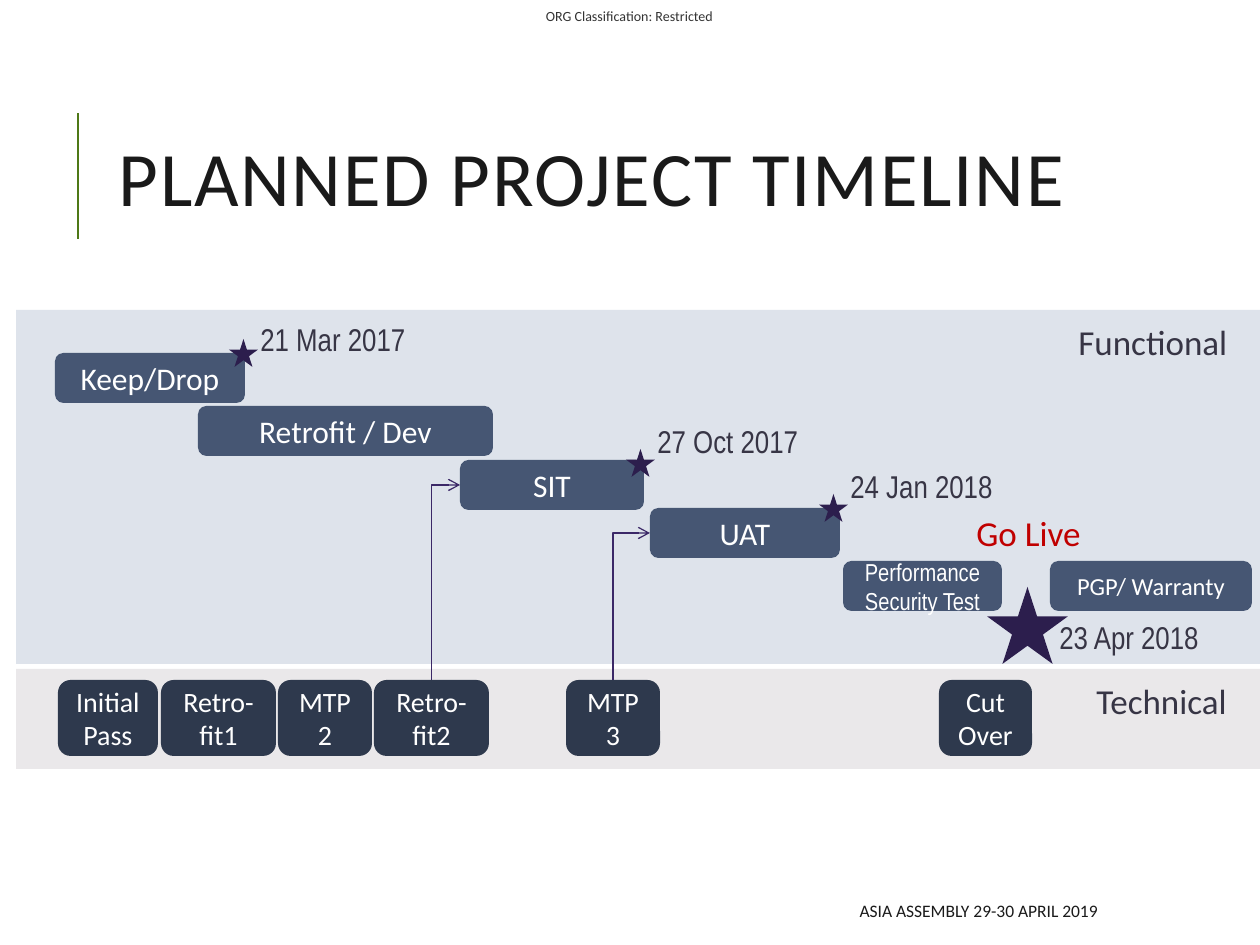
from dataclasses import dataclass

from lxml import etree
from pptx import Presentation
from pptx import util as u
from pptx.dml.color import RGBColor
from pptx.enum import shapes, text
from pptx.oxml.ns import qn

PX = u.Inches(1) / 126
COLORS = {
    "accent": "4E7817", "title": "1A1A1A", "header": "333333",
    "functional": "DEE3EB", "technical": "EAE8EA",
    "phase": "465673", "step": "2E394D", "white": "FFFFFF",
    "arrow": "3B2867", "star": "2C1E4D", "label": "373545", "live": "C00000",
}
KIND = shapes.MSO_SHAPE
ALIGN = text.PP_ALIGN


@dataclass
class Box:
    left: int
    top: int
    width: int
    height: int

    def emu(self) -> list[int]:
        return [px(v) for v in (self.left, self.top, self.width, self.height)]


@dataclass
class Bar:
    words: str
    box: Box
    fill: str = "phase"
    size: int = 18
    font: str = "Calibri"


@dataclass
class Label:
    words: str
    box: Box
    size: int = 18
    font: str = "Arial Narrow"
    color: str = "label"


def px(value: float) -> int:
    return round(value * PX)


def rgb(name: str) -> RGBColor:
    return RGBColor.from_string(COLORS[name])


def write(frame, words: str, size: int, font: str, color: str, align=ALIGN.LEFT):
    frame.text = words
    paragraph = frame.paragraphs[0]
    paragraph.alignment = align
    paragraph.font.size = u.Pt(size)
    paragraph.font.name = font
    paragraph.font.color.rgb = rgb(color)
    return paragraph


def add_filled(slide, kind, box: Box, fill: str):
    shape = slide.shapes.add_shape(kind, *box.emu())
    shape.shadow.inherit = False
    shape.fill.solid()
    shape.fill.fore_color.rgb = rgb(fill)
    shape.line.fill.background()
    return shape


def add_bar(slide, bar: Bar):
    shape = add_filled(slide, KIND.ROUNDED_RECTANGLE, bar.box, bar.fill)
    shape.text_frame.vertical_anchor = text.MSO_ANCHOR.MIDDLE
    write(shape.text_frame, bar.words, bar.size, bar.font, "white", ALIGN.CENTER)
    return shape


def add_label(slide, label: Label) -> None:
    frame = slide.shapes.add_textbox(*label.box.emu()).text_frame
    frame.word_wrap = False
    frame.auto_size = text.MSO_AUTO_SIZE.SHAPE_TO_FIT_TEXT
    write(frame, label.words, label.size, label.font, label.color)


def add_margin_text(slide, words: str, box: Box, size: int, color: str, align, inset: float):
    frame = slide.shapes.add_textbox(*box.emu()).text_frame
    frame.word_wrap = True
    frame.vertical_anchor = text.MSO_ANCHOR.MIDDLE
    frame.margin_left = frame.margin_right = u.Inches(inset)
    frame.margin_top = frame.margin_bottom = u.Inches(inset / 2)
    write(frame, words, size, "Calibri", color, align)


def style_line(connector, color: str, width: float) -> None:
    connector.line.color.rgb = rgb(color)
    connector.line.width = u.Pt(width)
    etree.SubElement(connector._element.spPr, qn("a:effectLst"))


def add_elbow(slide, step, phase) -> None:
    """Run up from the top of a step, then right into the side of a phase."""
    x1, y1 = step.left + step.width // 2, step.top
    x2, y2 = phase.left, phase.top + phase.height // 2
    elbow = slide.shapes.add_connector(shapes.MSO_CONNECTOR.ELBOW, x1, y1, x2, y2)
    elbow.begin_connect(step, 0)
    elbow.end_connect(phase, 1)
    style_line(elbow, "arrow", 0.75)
    etree.SubElement(elbow.line._get_or_add_ln(), qn("a:tailEnd"), type="arrow")

    # A one-corner elbow is stored turned a quarter, about its own centre
    properties = elbow._element.spPr
    properties.find(qn("a:prstGeom")).set("prst", "bentConnector2")
    frame = properties.find(qn("a:xfrm"))
    for key, value in (("rot", "5400000"), ("flipH", "1"), ("flipV", "1")):
        frame.set(key, value)
    elbow.width, elbow.height = y1 - y2, x2 - x1
    elbow.left = (x1 + x2 - elbow.width) // 2
    elbow.top = (y1 + y2 - elbow.height) // 2


PHASES = [
    Bar("Keep/Drop", Box(55, 353, 190, 50)),
    Bar("Retrofit / Dev", Box(198, 406, 295, 50)),
    Bar("SIT", Box(460, 460, 184, 50)),
    Bar("UAT", Box(650, 508, 190, 50)),
    Bar("Performance Security Test", Box(843, 561, 159, 50), size=14, font="Arial Narrow"),
    Bar("PGP/ Warranty", Box(1050, 561, 202, 50), size=14),
]
STEPS = [
    Bar(words, Box(left, 680, width, 76), "step", 16)
    for words, left, width in [
        ("Initial Pass", 58, 100), ("Retro-fit1", 161, 115), ("MTP 2", 278, 94),
        ("Retro-fit2", 374, 115), ("MTP 3", 566, 94), ("Cut Over", 939, 93),
    ]
]
LINKS = [("Retro-fit2", "SIT"), ("MTP 3", "UAT")]
STARS = [Box(left, top, 29, 28) for left, top in [(229, 339), (626, 449), (819, 494)]]
STARS.append(Box(987, 587, 81, 77))
LABELS = [
    Label("21 Mar 2017", Box(248, 314, 173, 50)),
    Label("27 Oct 2017", Box(645, 416, 168, 50)),
    Label("24 Jan 2018", Box(838, 461, 170, 50)),
    Label("23 Apr 2018", Box(1047, 612, 166, 50)),
    Label("Go Live", Box(964, 505, 147, 55), 20, "Calibri", "live"),
    Label("Functional", Box(1066, 314, 189, 55), 20, "Calibri"),
    Label("Technical", Box(1084, 673, 173, 55), 20, "Calibri"),
]


def main() -> None:
    deck = Presentation()
    deck.slide_width, deck.slide_height = u.Inches(10), u.Inches(7.5)
    slide = deck.slides.add_slide(deck.slide_layouts[5])

    # Title with its accent line
    title = slide.shapes.title
    title.left, title.top, title.width, title.height = Box(106, 81, 1004, 207).emu()
    title.text_frame.auto_size = text.MSO_AUTO_SIZE.NONE
    title.text_frame.vertical_anchor = text.MSO_ANCHOR.MIDDLE
    heading = write(title.text_frame, "PLANNED PROJECT TIMELINE", 44, "Calibri", "title")
    heading.line_spacing = 0.8
    heading.runs[0].font._element.set("spc", "100")
    accent = slide.shapes.add_connector(
        shapes.MSO_CONNECTOR.STRAIGHT, px(78), px(239), px(78), px(113))
    style_line(accent, "accent", 1.5)

    # Header and footer
    add_margin_text(slide, "ORG Classification: Restricted", Box(527, 0, 205, 32),
                    8, "header", ALIGN.CENTER, 0)
    add_margin_text(slide, "ASIA ASSEMBLY 29-30 APRIL 2019", Box(500, 892, 610, 38),
                    10, "title", ALIGN.RIGHT, 0.1)

    # Lanes, bars and the links between them
    add_filled(slide, KIND.RECTANGLE, Box(16, 310, 1244, 354), "functional")
    add_filled(slide, KIND.RECTANGLE, Box(16, 669, 1244, 100), "technical")
    bars = {bar.words: add_bar(slide, bar) for bar in PHASES + STEPS}
    for step, phase in LINKS:
        add_elbow(slide, bars[step], bars[phase])

    # Milestones and labels
    for star in STARS:
        add_filled(slide, KIND.STAR_5_POINT, star, "star")
    for label in LABELS:
        add_label(slide, label)

    deck.save("out.pptx")


if __name__ == "__main__":
    main()
